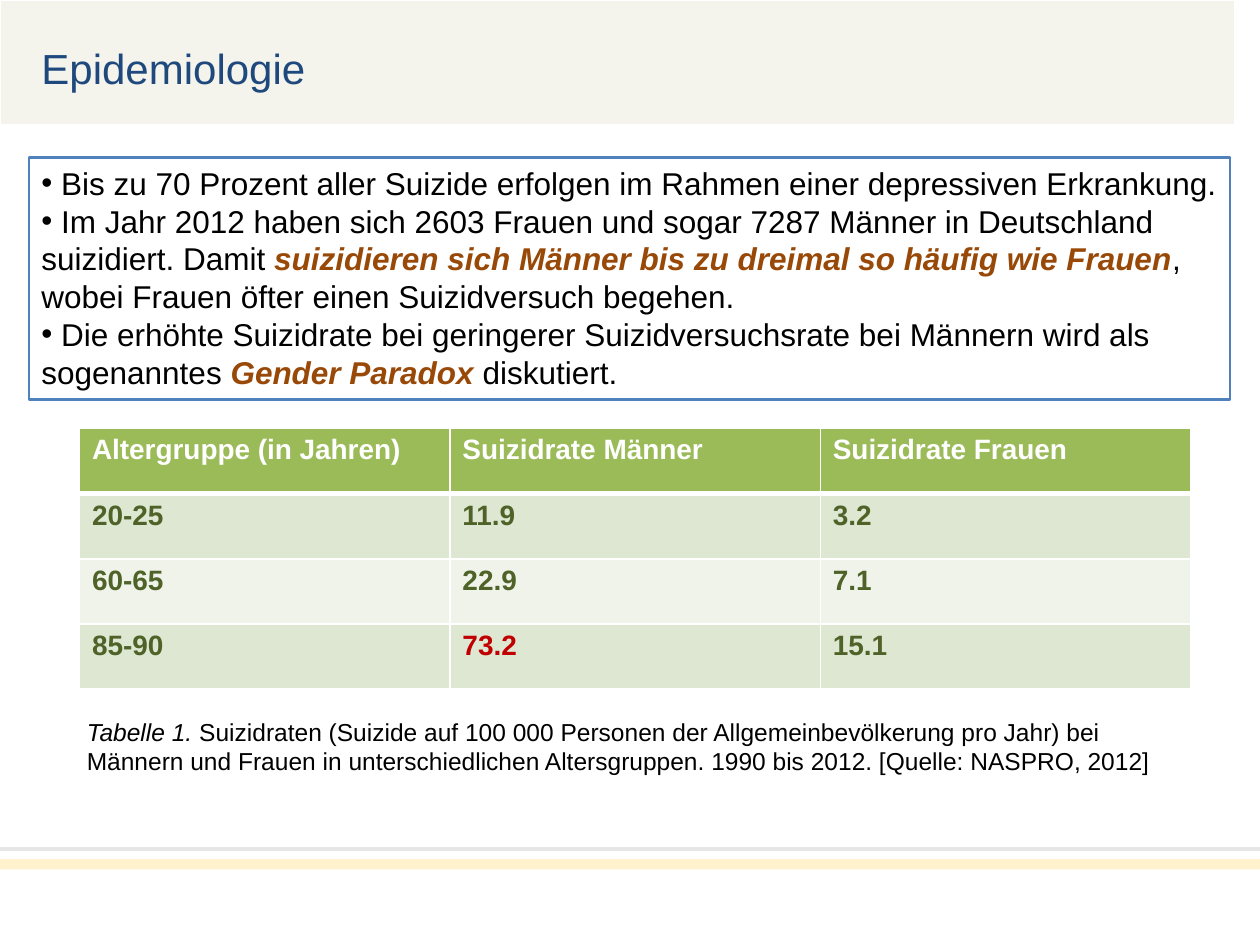
from dataclasses import dataclass
from typing import NamedTuple

from lxml import etree
from pptx import Presentation
from pptx.dml.color import RGBColor
from pptx.enum.shapes import MSO_CONNECTOR, MSO_SHAPE
from pptx.enum.text import MSO_ANCHOR, PP_ALIGN
from pptx.oxml.ns import qn
from pptx.util import Pt

RECTANGLE = MSO_SHAPE.RECTANGLE
STRAIGHT = MSO_CONNECTOR.STRAIGHT
LEFT = PP_ALIGN.LEFT
TOP = MSO_ANCHOR.TOP


@dataclass(frozen=True)
class Theme:
    font: str = "Arial"
    title_size: float = 24
    body_size: float = 18
    table_size: float = 16
    caption_size: float = 14
    title: str = "1F497D"
    text: str = "000000"
    emphasis: str = "984807"
    white: str = "FFFFFF"
    title_band: str = "F4F3EC"
    footer_line: str = "E7E6E6"
    footer_band: str = "FFF2CC"
    box_line: str = "4F81BD"
    header_fill: str = "9BBB59"
    odd_fill: str = "DEE7D1"
    even_fill: str = "EFF3EA"
    table_text: str = "4F6228"
    alert: str = "C00000"


class Box(NamedTuple):
    left: float
    top: float
    width: float
    height: float

    def lengths(self) -> tuple:
        return tuple(Pt(value) for value in self)


class Run(NamedTuple):
    text: str
    color: str
    bold: bool = False
    italic: bool = False


THEME = Theme()
SLIDE_WIDTH, SLIDE_HEIGHT = 720, 540
TITLE_BAND = Box(0, 0, 705.6, 71.3)
TITLE = Box(16.6, 20.9, 540, 36.4)
FACTS_BOX = Box(16.6, 90, 686.2, 138.3)
TABLE = Box(45.4, 244.8, 635, 149)
CAPTION = Box(42.5, 406.1, 635, 41)
FOOTER_LINE_TOP = 485.3
FOOTER_BAND = Box(0, 491, SLIDE_WIDTH, 5.8)
THIN_BORDER, HEADER_BORDER = 1, 3

FACTS = [
    [Run(" Bis zu 70 Prozent aller Suizide erfolgen im Rahmen einer depressiven Erkrankung.", THEME.text)],
    [
        Run(" Im Jahr 2012 haben sich 2603 Frauen und sogar 7287 Männer in Deutschland suizidiert. Damit ", THEME.text),
        Run("suizidieren sich Männer bis zu dreimal so häufig wie Frauen", THEME.emphasis, True, True),
        Run(", wobei Frauen öfter einen Suizidversuch begehen.", THEME.text),
    ],
    [
        Run(" Die erhöhte Suizidrate bei geringerer Suizidversuchsrate bei Männern wird als sogenanntes ", THEME.text),
        Run("Gender Paradox ", THEME.emphasis, True, True),
        Run("diskutiert.", THEME.text),
    ],
]
CAPTION_RUNS = [
    Run("Tabelle 1. ", THEME.text, italic=True),
    Run(
        "Suizidraten (Suizide auf 100 000 Personen der Allgemeinbevölkerung pro Jahr) bei Männern "
        "und Frauen in unterschiedlichen Altersgruppen. 1990 bis 2012. [Quelle: NASPRO, 2012]",
        THEME.text,
    ),
]
RATES = [
    ["Altergruppe (in Jahren)", "Suizidrate Männer", "Suizidrate Frauen"],
    ["20-25", "11.9", "3.2"],
    ["60-65", "22.9", "7.1"],
    ["85-90", "73.2", "15.1"],
]
HIGHLIGHTED_RATE = "73.2"


def rgb(color: str) -> RGBColor:
    return RGBColor.from_string(color)


def write_paragraphs(text_frame, paragraphs: list, size: float, bullet: str = "") -> None:
    text_frame.word_wrap = True
    for index, runs in enumerate(paragraphs):
        paragraph = text_frame.add_paragraph() if index else text_frame.paragraphs[0]
        paragraph.alignment = LEFT
        if bullet:
            properties = paragraph._p.get_or_add_pPr()
            etree.SubElement(properties, qn("a:buFont")).set("typeface", THEME.font)
            etree.SubElement(properties, qn("a:buChar")).set("char", bullet)
        for item in runs:
            run = paragraph.add_run()
            run.text = item.text
            run.font.name = THEME.font
            run.font.size = Pt(size)
            run.font.bold = item.bold
            run.font.italic = item.italic
            run.font.color.rgb = rgb(item.color)


def add_rectangle(slide, box: Box, fill: str = "", line: str = "", line_width: float = 0):
    shape = slide.shapes.add_shape(RECTANGLE, *box.lengths())
    shape.shadow.inherit = False
    if fill:
        shape.fill.solid()
        shape.fill.fore_color.rgb = rgb(fill)
    else:
        shape.fill.background()
    if line:
        shape.line.color.rgb = rgb(line)
        shape.line.width = Pt(line_width)
    else:
        shape.line.fill.background()
    return shape


def add_text(slide, box: Box, runs: list, size: float) -> None:
    shape = slide.shapes.add_textbox(*box.lengths())
    write_paragraphs(shape.text_frame, [runs], size)


def add_line(slide, top: float, color: str, width: float) -> None:
    line = slide.shapes.add_connector(STRAIGHT, Pt(0), Pt(top), Pt(SLIDE_WIDTH), Pt(top))
    line.line.color.rgb = rgb(color)
    line.line.width = Pt(width)
    etree.SubElement(line._element.spPr, qn("a:effectLst"))


def set_borders(cell, widths: dict) -> None:
    properties = cell._tc.get_or_add_tcPr()
    for position, (side, width) in enumerate(widths.items()):
        border = etree.Element(qn(f"a:ln{side}"), w=str(Pt(width)))
        fill = etree.SubElement(border, qn("a:solidFill"))
        etree.SubElement(fill, qn("a:srgbClr")).set("val", THEME.white)
        properties.insert(position, border)


def add_rate_table(slide) -> None:
    table = slide.shapes.add_table(len(RATES), len(RATES[0]), *TABLE.lengths()).table
    for column in table.columns:
        column.width = Pt(TABLE.width / len(RATES[0]))
    for row_index, values in enumerate(RATES):
        is_header = row_index == 0
        band = THEME.odd_fill if row_index % 2 else THEME.even_fill
        top = HEADER_BORDER if row_index == 1 else THIN_BORDER
        bottom = HEADER_BORDER if is_header else THIN_BORDER
        table.rows[row_index].height = Pt(TABLE.height / len(RATES))
        for column_index, value in enumerate(values):
            cell = table.cell(row_index, column_index)
            color = THEME.alert if value == HIGHLIGHTED_RATE else THEME.table_text
            run = Run(value, THEME.white if is_header else color, bold=True)
            write_paragraphs(cell.text_frame, [[run]], THEME.table_size)
            cell.fill.solid()
            cell.fill.fore_color.rgb = rgb(THEME.header_fill if is_header else band)
            set_borders(cell, {"L": THIN_BORDER, "R": THIN_BORDER, "T": top, "B": bottom})


def main() -> None:
    """Build the epidemiology slide and save it."""
    presentation = Presentation()
    presentation.slide_width = Pt(SLIDE_WIDTH)
    presentation.slide_height = Pt(SLIDE_HEIGHT)
    slide = presentation.slides.add_slide(presentation.slide_layouts[6])
    add_rectangle(slide, TITLE_BAND, THEME.title_band, THEME.white, 0.75)
    add_line(slide, FOOTER_LINE_TOP, THEME.footer_line, 2)
    add_rectangle(slide, FOOTER_BAND, THEME.footer_band)
    add_text(slide, TITLE, [Run("Epidemiologie", THEME.title)], THEME.title_size)
    add_rate_table(slide)
    add_text(slide, CAPTION, CAPTION_RUNS, THEME.caption_size)
    facts = add_rectangle(slide, FACTS_BOX, line=THEME.box_line, line_width=1.5)
    facts.text_frame.vertical_anchor = TOP
    write_paragraphs(facts.text_frame, FACTS, THEME.body_size, bullet="•")
    presentation.save("out.pptx")


if __name__ == "__main__":
    main()
